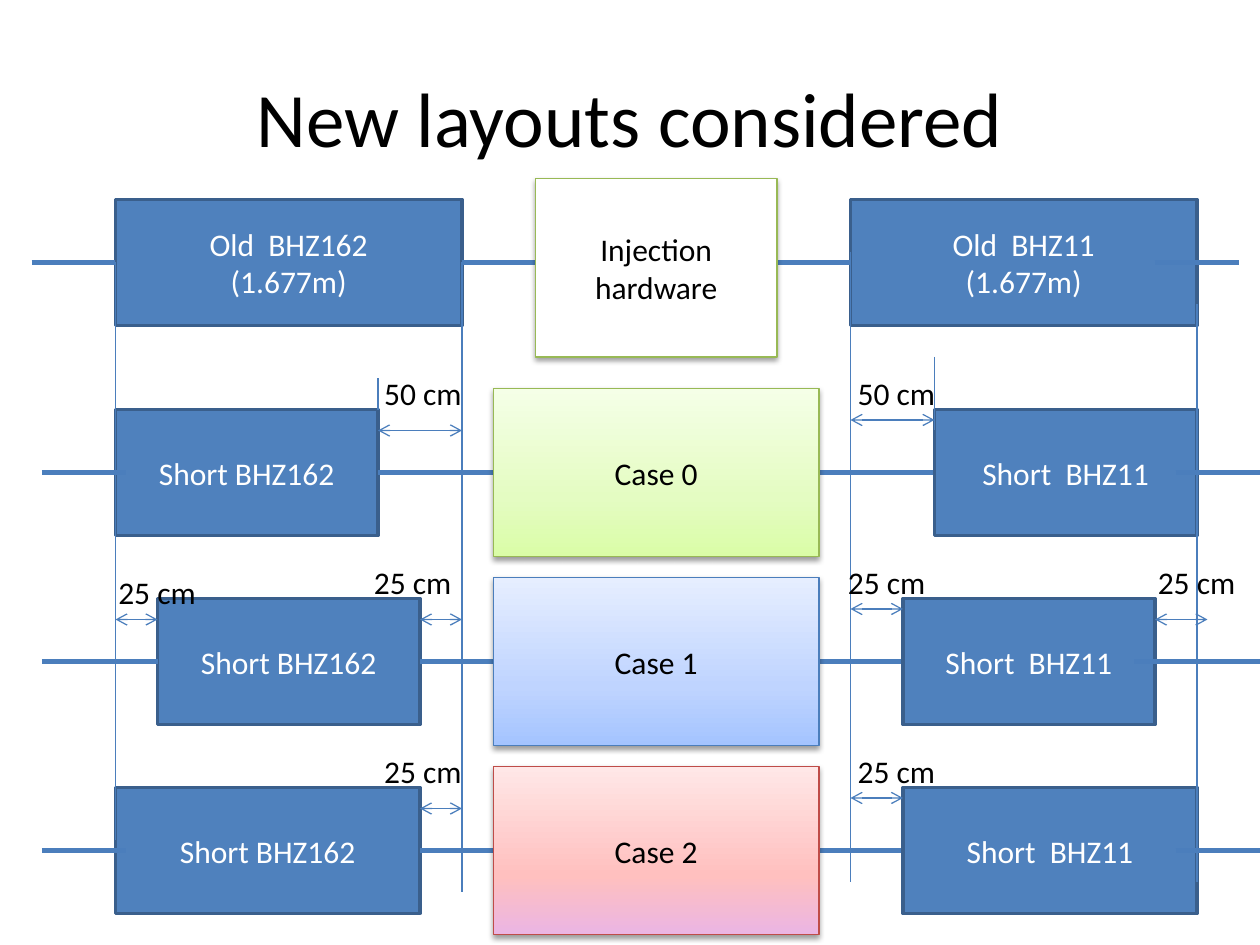
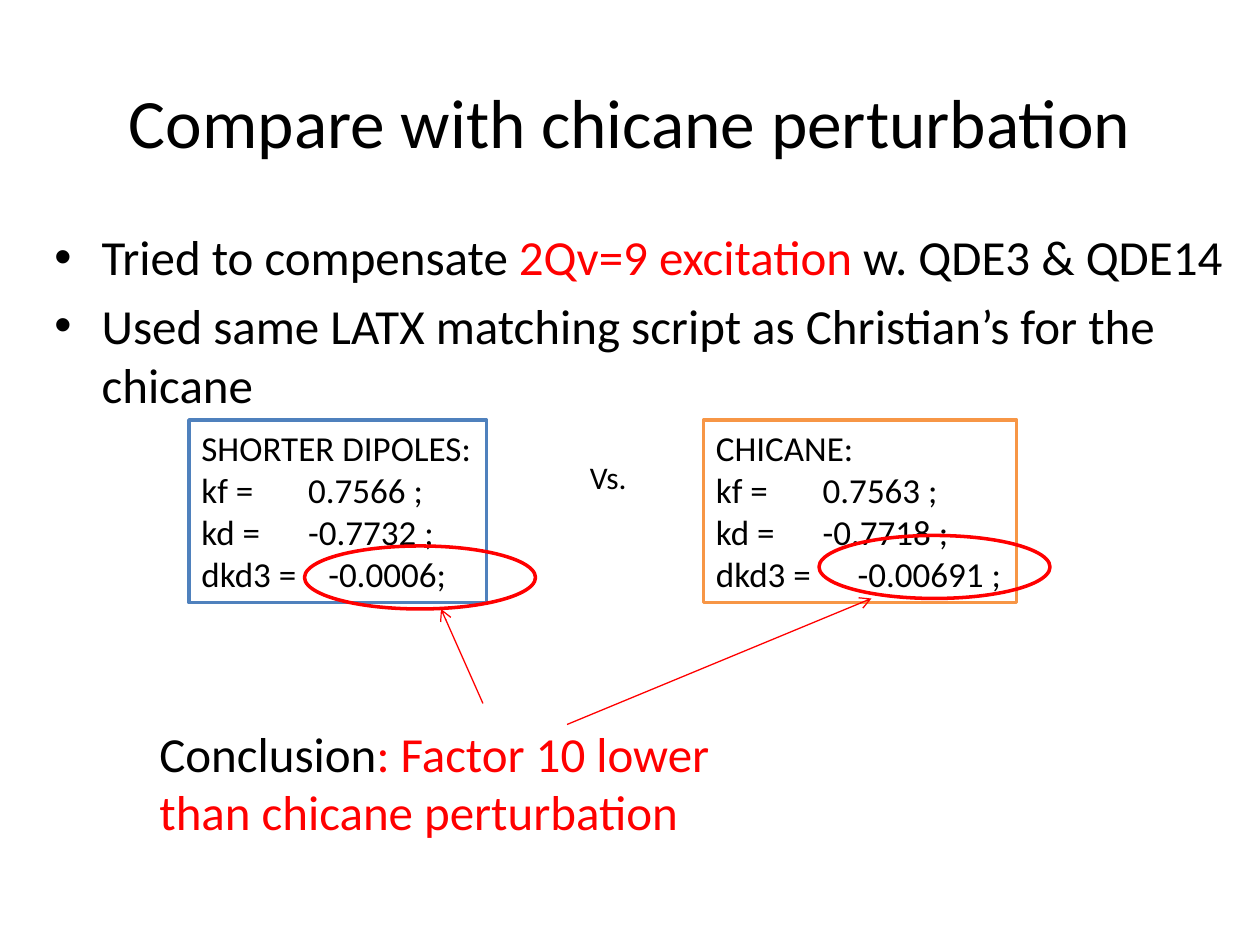
from lxml import etree
from pptx import Presentation
from pptx.dml.color import RGBColor
from pptx.enum import shapes, text
from pptx.oxml import ns
from pptx.util import Pt

# Shared look
FONT = "Calibri"
BLACK = RGBColor(0, 0, 0)
WHITE = RGBColor(255, 255, 255)
RED = RGBColor(255, 0, 0)
BLUE = RGBColor(0x4F, 0x81, 0xBD)
NAVY = RGBColor(0x3A, 0x5F, 0x8C)
BEAM = RGBColor(0x4B, 0x7E, 0xBC)
GREEN = RGBColor(0x98, 0xB9, 0x55)
BRICK = RGBColor(0xBF, 0x4C, 0x48)
ORANGE = RGBColor(0xF7, 0x96, 0x46)
LIME = ("DAFDA7", "E4FCC2", "F5FFE7")
SKY = ("A4C4FF", "BFD4FF", "E6EEFF")
ROSE = ("EBB5E3", "FFC0BF", "FFE7E7")

RECT = shapes.MSO_SHAPE.RECTANGLE
OVAL = shapes.MSO_SHAPE.OVAL
LEFT, MID = text.PP_ALIGN.LEFT, text.PP_ALIGN.CENTER
TOP, HALF = text.MSO_ANCHOR.TOP, text.MSO_ANCHOR.MIDDLE

# Slide 1 content: the old magnets' edges bound the two outer zones
EDGES = (66, 264, 486, 684)
OLD = [(66, ["Old  BHZ162", "(1.677m)"]), (486, ["Old  BHZ11", "(1.677m)"])]
NAMES = ("Short BHZ162", "Short  BHZ11")
# spans: left and right magnet; tags: text, left, drop from magnet top
# gaps: extra arrows; ticks: x, from, to relative to magnet top
CASES = [
    dict(name="Case 0", top=234, spans=[(66, 216), (534, 684)], tint=LIME, edge=GREEN,
         tags=[("50 cm", 212.4, -24), ("50 cm", 483, -24)], gaps=[],
         ticks=[(216, -18, 0), (534, -30, 12)]),
    dict(name="Case 2", top=450, spans=[(66, 240), (516, 684)], tint=ROSE, edge=BRICK,
         tags=[("25 cm", 212.4, -24), ("25 cm", 483, -24)], gaps=[], ticks=[]),
    dict(name="Case 1", top=342, spans=[(90, 240), (516, 660)], tint=SKY, edge=BEAM,
         tags=[("25 cm", 206.6, -24), ("25 cm", 477.4, -24),
               ("25 cm", 60.5, -18), ("25 cm", 654.5, -24)],
         gaps=[(66, 90), (690, 660)], ticks=[]),
]

# Slide 2 content
POINTS = [
    [("Tried to compensate ", BLACK), ("2Qv=9 excitation", RED), (" w. QDE3 & QDE14", BLACK)],
    [("Used same LATX matching script as Christian’s for the chicane", BLACK)],
]
# left, width, edge, heading, rows of (name, value, tab stop)
SETS = [
    (402, 179, ORANGE, "CHICANE:",
     [("kf =", "0.7563 ;", 61), ("kd =", "-0.7718 ;", 61), ("dkd3 =", "-0.00691 ;", 81)]),
    (108, 170, BLUE, "SHORTER DIPOLES:",
     [("kf =", "0.7566 ;", 61), ("kd =", "-0.7732 ;", 61), ("dkd3 =", "-0.0006;", 72.5)]),
]
RINGS = [(174, 312), (468, 306)]
ARROWS = [(276, 402, 252, 348), (324, 414, 498, 342)]
RESULT = [("Conclusion", BLACK), (": Factor 10 lower than chicane perturbation", RED)]


def sub(node, tag, **attrs):
    return etree.SubElement(node, ns.qn("a:" + tag), attrs)


def write(shape, paras, size, align=LEFT, anchor=TOP, wrap=True):
    """Fill a shape with paragraphs, each a list of (text, colour) runs."""
    frame = shape.text_frame
    frame.word_wrap = wrap
    frame.vertical_anchor = anchor
    for i, runs in enumerate(paras):
        par = frame.paragraphs[0] if i == 0 else frame.add_paragraph()
        par.alignment = align
        for words, color in runs:
            run = par.add_run()
            run.text = words
            run.font.name, run.font.size = FONT, Pt(size)
            run.font.color.rgb = color
    return frame


def label(host, box, paras, size, **look):
    return write(host.add_textbox(*map(Pt, box)), paras, size, **look)


def block(host, box, edge, width, fill=None, kind=RECT):
    shape = host.add_shape(kind, *map(Pt, box))
    shape.shadow.inherit = False
    if fill is None:
        shape.fill.background()
    else:
        shape.fill.solid()
        shape.fill.fore_color.rgb = fill
    shape.line.color.rgb, shape.line.width = edge, Pt(width)
    return shape


def magnet(host, x, y, w, lines):
    shape = block(host, (x, y, w, 72), NAVY, 2, BLUE)
    write(shape, [[(s, WHITE)] for s in lines], 18, MID, HALF)


def panel(host, box, edge, words, tint=None):
    """White or tinted box with a soft shadow."""
    shape = block(host, box, edge, 0.75, WHITE)
    if tint:
        shape.fill.gradient()
        shape.fill.gradient_angle = 90
        stops = shape._element.spPr.find(".//" + ns.qn("a:gsLst"))
        for old in list(stops):
            stops.remove(old)
        for pos, val in zip((0, 35, 100), tint):
            sub(sub(stops, "gs", pos=str(pos * 1000)), "srgbClr", val=val)
    glow = sub(shape._element.spPr.find(ns.qn("a:effectLst")), "outerShdw",
               blurRad=str(Pt(3.1)), dist=str(Pt(1.6)), dir="5400000", rotWithShape="0")
    sub(sub(glow, "srgbClr", val="000000"), "alpha", val="38000")
    write(shape, [[(words, BLACK)]], 18, MID, HALF)


def line(host, x1, y1, x2, y2, width=0.75, color=BEAM, ends=()):
    link = host.add_connector(shapes.MSO_CONNECTOR.STRAIGHT, *map(Pt, (x1, y1, x2, y2)))
    link.line.color.rgb, link.line.width = color, Pt(width)
    for end in ends:
        sub(link.line._get_or_add_ln(), end, type="arrow")
    sub(link._element.spPr, "effectLst")


def gauge(host, x1, x2, y):
    line(host, x1, y, x2, y, ends=("headEnd", "tailEnd"))


def page(deck, title, top, size):
    host = deck.slides.add_slide(deck.slide_layouts[6]).shapes
    label(host, (36, top, 648, 90), [[(title, BLACK)]], size, align=MID, anchor=HALF)
    return host


def case(host, row):
    part = host.add_group_shape().shapes
    top, mid = row["top"], row["top"] + 36
    (a, b), (c, d) = row["spans"]
    magnet(part, a, top, b - a, [NAMES[0]])
    line(part, b, mid, c, mid, 3)
    magnet(part, c, top, d - c, [NAMES[1]])
    panel(part, (282, top - 12, 186, 96), row["edge"], row["name"], row["tint"])
    for x, y1, y2 in row["ticks"]:
        line(part, x, top + y1, x, top + y2)
    gauge(part, b, EDGES[1], top + 12)
    gauge(part, c, EDGES[2], top + 6)
    for x1, x2 in row["gaps"]:
        gauge(part, x1, x2, top + 12)
    for words, x, drop in row["tags"]:
        label(part, (x, top + drop, 59, 29), [[(words, BLACK)]], 18, wrap=False)
    line(part, d - 12, mid, 720, mid, 3)
    line(part, 24, mid, max(72, a), mid, 3)


def layouts(deck):
    host = page(deck, "New layouts considered", 21.6, 44)
    # Present layout
    for x, lines in OLD:
        magnet(host, x, 114, 198, lines)
    line(host, 264, 150, 486, 150, 3)
    panel(host, (306, 102, 138, 102), GREEN, "Injection hardware")
    # Inner guides and beam ends
    line(host, EDGES[1], 150, EDGES[1], 510)
    line(host, EDGES[2], 144, EDGES[2], 504)
    for x in (18, 660):
        line(host, x, 150, x + 48, 150, 3)
    # Cases, with the outer guides below the last one
    for row in CASES[:2]:
        case(host, row)
    line(host, EDGES[0], 150, EDGES[0], 480)
    line(host, EDGES[3], 174, EDGES[3], 504)
    case(host, CASES[2])


def compare(deck):
    host = page(deck, "Compare with chicane perturbation", 24, 39.6)
    # Bullets
    body = label(host, (24, 126, 684, 356), POINTS, 28)
    for par in body.paragraphs:
        par.space_before = Pt(5.6)
        props = par._p.get_or_add_pPr()
        props.set("marL", str(Pt(27)))
        props.set("indent", str(Pt(-27)))
        sub(props, "buFont", typeface="Arial")
        sub(props, "buChar", char="•")
    # Value boxes, one tab stop a row
    for x, w, edge, head, rows in SETS:
        shape = block(host, (x, 240, w, 104.4), edge, 2, WHITE)
        paras = [[(head, BLACK)]] + [[(f"{name}\t{val}", BLACK)] for name, val, _ in rows]
        frame = write(shape, paras, 20)
        frame.margin_right = 0
        for par, (_, _, stop) in zip(frame.paragraphs[1:], rows):
            tabs = sub(par._p.get_or_add_pPr(), "tabLst")
            sub(tabs, "tab", pos=str(Pt(stop)), algn="l")
    # Rings and arrows
    for x, y in RINGS:
        block(host, (x, y, 132, 36), RED, 2, kind=OVAL)
    for ends in ARROWS:
        line(host, *ends, color=RED, ends=("tailEnd",))
    label(host, (84, 409.7, 348, 75), [RESULT], 28)
    label(host, (330, 258, 36, 29), [[("Vs.", BLACK)]], 18, wrap=False)


def main():
    deck = Presentation()
    deck.slide_width, deck.slide_height = Pt(720), Pt(540)
    layouts(deck)
    compare(deck)
    deck.save("out.pptx")


if __name__ == "__main__":
    main()
